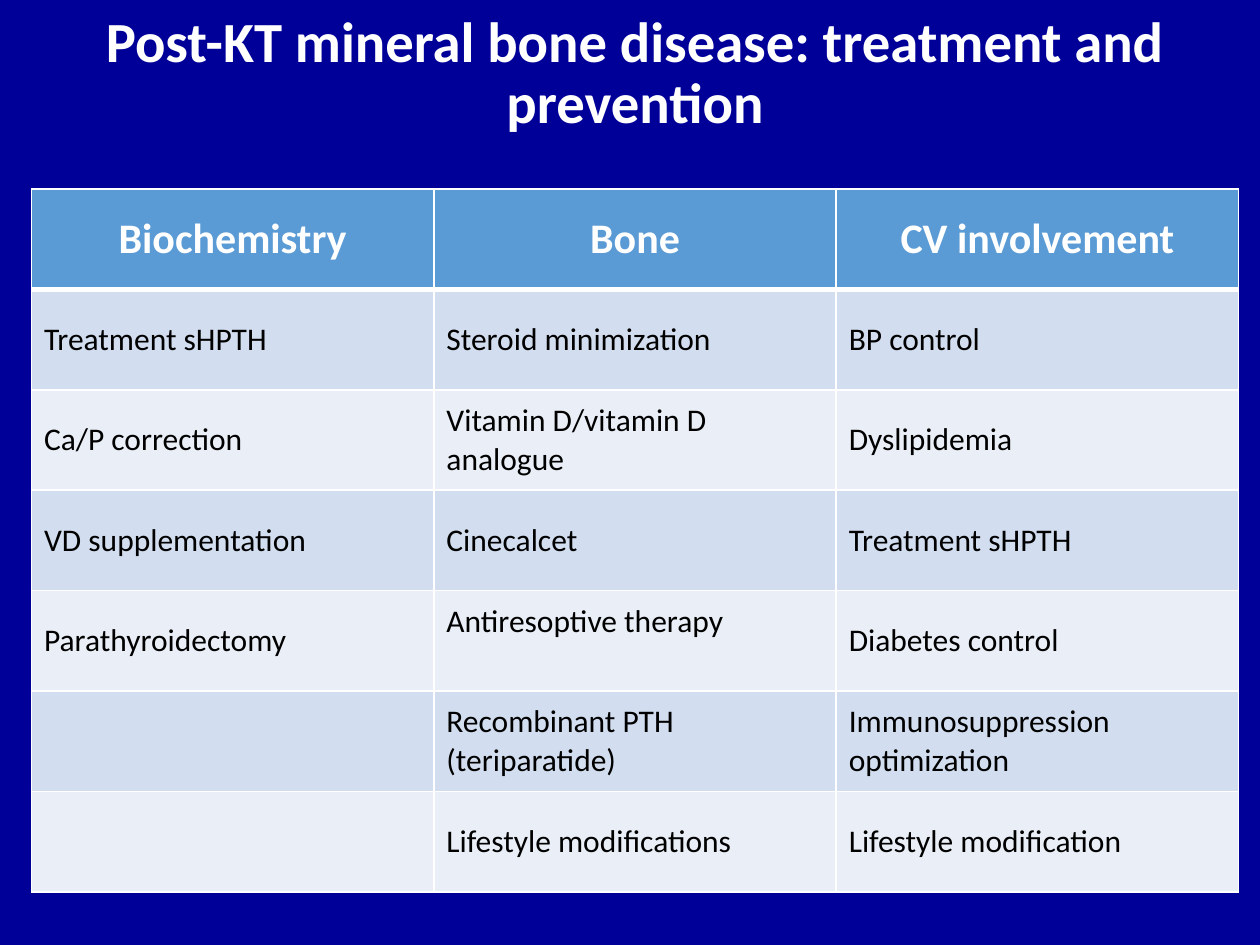
from lxml.etree import SubElement
from pptx import Presentation
from pptx.dml.color import RGBColor
from pptx.enum.text import MSO_ANCHOR, MSO_AUTO_SIZE, PP_ALIGN
from pptx.oxml.ns import qn
from pptx.util import Inches, Pt

TITLE = "Post-KT mineral bone disease: treatment and prevention"
TREATMENTS = [
    ["Biochemistry", "Bone", "CV involvement"],
    ["Treatment sHPTH", "Steroid minimization", "BP control"],
    ["Ca/P correction", "Vitamin D/vitamin D analogue", "Dyslipidemia"],
    ["VD supplementation", "Cinecalcet", "Treatment sHPTH"],
    ["Parathyroidectomy", "Antiresoptive therapy", "Diabetes control"],
    ["", "Recombinant PTH (teriparatide)", "Immunosuppression optimization"],
    ["", "Lifestyle modifications", "Lifestyle modification"],
]
LEFT, WIDTH = 0.25, 9.58


def color(value):
    return RGBColor.from_string(value)


class SlideBuilder:
    font_name = "Calibri"
    background, white, black = "000099", "FFFFFF", "000000"
    header_fill = "5B9BD5"
    band_fills = ("D2DEEF", "EAEFF7")

    def __init__(self, presentation):
        self.slide = presentation.slides.add_slide(presentation.slide_layouts[5])
        fill = self.slide.background.fill
        fill.solid()
        fill.fore_color.rgb = color(self.background)

    def style(self, paragraph, size, text_color, bold, alignment):
        paragraph.alignment = alignment
        font = paragraph.font
        font.name, font.size, font.bold = self.font_name, Pt(size), bold
        font.color.rgb = color(text_color)

    def title(self, text, top, height):
        shape = self.slide.shapes.title
        shape.left, shape.top = Inches(LEFT), Inches(top)
        shape.width, shape.height = Inches(WIDTH), Inches(height)
        frame = shape.text_frame
        frame.text = text
        frame.word_wrap = True
        frame.auto_size = MSO_AUTO_SIZE.NONE
        frame.vertical_anchor = MSO_ANCHOR.MIDDLE
        paragraph = frame.paragraphs[0]
        paragraph.line_spacing = 0.9
        self.style(paragraph, 32.4, self.white, True, PP_ALIGN.CENTER)

    def borders(self, cell, **widths):
        properties = cell._tc.get_or_add_tcPr()
        for side, width in widths.items():
            line = SubElement(properties, qn(f"a:ln{side}"), w=str(Pt(width)))
            fill = SubElement(line, qn("a:solidFill"))
            SubElement(fill, qn("a:srgbClr"), val=self.white)

    def cell(self, cell, text, row):
        header = row == 0
        # The rule under the header is thicker than the other lines
        self.borders(cell, L=1, R=1, T=3 if row == 1 else 1, B=3 if header else 1)
        cell.fill.solid()
        cell.fill.fore_color.rgb = color(
            self.header_fill if header else self.band_fills[(row - 1) % 2])
        cell.vertical_anchor = MSO_ANCHOR.MIDDLE
        cell.text = text
        paragraph = cell.text_frame.paragraphs[0]
        if header:
            self.style(paragraph, 24, self.white, True, PP_ALIGN.CENTER)
        else:
            self.style(paragraph, 18, self.black, False, PP_ALIGN.LEFT)

    def table(self, rows, top, height):
        table = self.slide.shapes.add_table(
            len(rows), len(rows[0]), Inches(LEFT), Inches(top),
            Inches(WIDTH), Inches(height)).table
        for row, texts in enumerate(rows):
            for column, text in enumerate(texts):
                self.cell(table.cell(row, column), text, row)
        return table


def main():
    presentation = Presentation()
    presentation.slide_width, presentation.slide_height = Inches(10), Inches(7.5)
    builder = SlideBuilder(presentation)

    # Title
    builder.title(TITLE, top=0.17, height=0.85)

    # Treatment table, with one entry set higher in its cell
    table = builder.table(TREATMENTS, top=1.5, height=5.58)
    table.cell(4, 1).margin_bottom = Inches(0.35)

    presentation.save("out.pptx")


if __name__ == "__main__":
    main()
